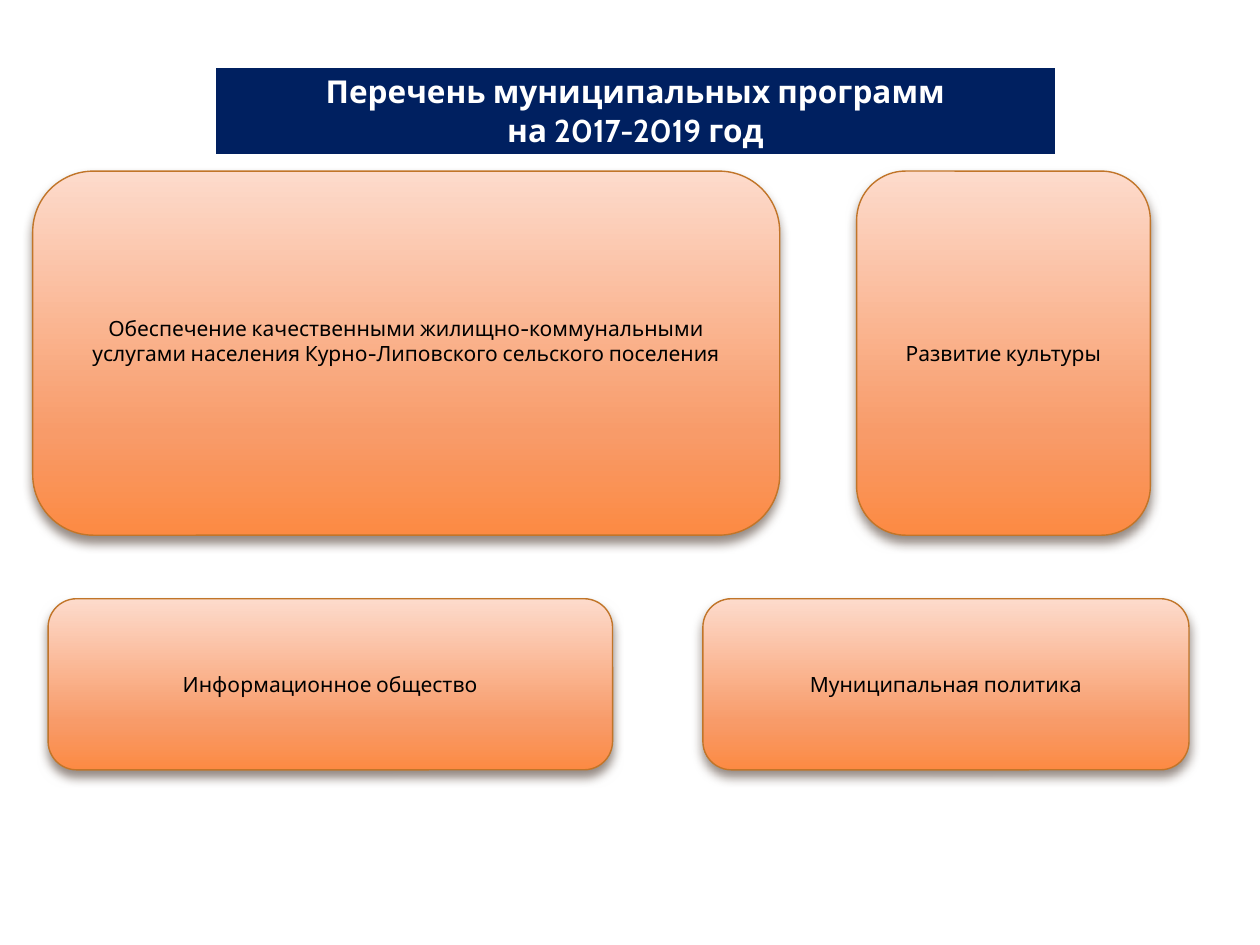
from dataclasses import dataclass

from lxml import etree
from pptx import Presentation
from pptx.dml.color import RGBColor
from pptx.enum.shapes import MSO_SHAPE
from pptx.enum.text import MSO_ANCHOR, PP_ALIGN
from pptx.oxml.ns import qn
from pptx.util import Cm, Pt

ROUNDED = MSO_SHAPE.ROUNDED_RECTANGLE
MIDDLE = MSO_ANCHOR.MIDDLE
CENTER = PP_ALIGN.CENTER
BLANK_LAYOUT = 6

# Content
HEADING = ["Перечень муниципальных программ", "на 2017-2019 год"]
HEADING_PLACE = (4.34, 1.35, 16.94, 1.78)  # left, top, width, height in cm

# Rows of programs: (top, height, [(name, left, width, extra bottom inset)])
PROGRAM_ROWS = [
    (3.45, 7.34, [
        ("Развитие культуры", 17.27, 5.92, 0),
        ("Обеспечение качественными жилищно-коммунальными услугами "
         "населения Курно-Липовского сельского поселения", 0.66, 15.06, 0.51),
    ]),
    (12.07, 3.45, [
        ("Информационное общество", 0.97, 11.38, 0),
        ("Муниципальная политика", 14.17, 9.8, 0),
    ]),
]


@dataclass(frozen=True)
class Theme:
    font: str = "Cabin"
    heading_size: int = 18
    program_size: int = 12
    heading_fill: str = "002060"
    heading_text: str = "FFFFFF"
    program_text: str = "000000"
    program_line: str = "C17529"
    shadow: str = "4E3B30"
    gradient: tuple = ((0, "FDDBCC"), (72, "F89B69"), (100, "FC8A43"))
    # Cell border widths in points, in schema order
    borders: tuple = (("lnL", 1), ("lnR", 1), ("lnT", 1), ("lnB", 3))


THEME = Theme()


def add_color(parent, color):
    return etree.SubElement(parent, qn("a:srgbClr"), val=color)


def write_lines(frame, lines, size, color, bold=False):
    for index, line in enumerate(lines):
        paragraph = frame.paragraphs[0] if index == 0 else frame.add_paragraph()
        paragraph.alignment = CENTER
        run = paragraph.add_run()
        run.text = line
        run.font.name = THEME.font
        run.font.size = Pt(size)
        run.font.bold = bold
        run.font.color.rgb = RGBColor.from_string(color)


def add_heading(slide):
    table = slide.shapes.add_table(1, 1, *map(Cm, HEADING_PLACE)).table
    cell = table.cell(0, 0)
    cell.fill.solid()
    cell.fill.fore_color.rgb = RGBColor.from_string(THEME.heading_fill)
    write_lines(cell.text_frame, HEADING, THEME.heading_size,
                THEME.heading_text, bold=True)
    # Borders come before the fill in the cell properties
    properties = cell._tc.get_or_add_tcPr()
    for index, (side, width) in enumerate(THEME.borders):
        border = etree.Element(qn(f"a:{side}"), w=str(Pt(width)))
        add_color(etree.SubElement(border, qn("a:solidFill")), THEME.heading_text)
        properties.insert(index, border)


def paint_gradient(shape):
    shape.fill.gradient()
    shape.fill.gradient_angle = 270  # counter-clockwise: top to bottom
    stops = shape._element.spPr.find(".//" + qn("a:gsLst"))
    for stop in list(stops):
        stops.remove(stop)
    for percent, color in THEME.gradient:
        add_color(etree.SubElement(stops, qn("a:gs"), pos=str(percent * 1000)), color)


def add_shadow(shape):
    shape.shadow.inherit = False
    effects = shape._element.spPr.find(qn("a:effectLst"))
    shadow = etree.SubElement(effects, qn("a:outerShdw"), blurRad=str(Pt(6)),
                              dist=str(Pt(4)), dir="5400000", rotWithShape="0")
    etree.SubElement(add_color(shadow, THEME.shadow), qn("a:alpha"), val="60000")


def add_program(slide, name, left, top, width, height, extra_inset):
    box = slide.shapes.add_shape(ROUNDED, *map(Cm, (left, top, width, height)))
    paint_gradient(box)
    box.line.color.rgb = RGBColor.from_string(THEME.program_line)
    box.line.width = Pt(0.79)
    add_shadow(box)
    frame = box.text_frame
    frame.word_wrap = True
    frame.vertical_anchor = MIDDLE
    frame.margin_bottom += Cm(extra_inset)
    write_lines(frame, [name], THEME.program_size, THEME.program_text)


def main():
    deck = Presentation()
    deck.slide_width, deck.slide_height = Cm(25.4), Cm(19.05)
    slide = deck.slides.add_slide(deck.slide_layouts[BLANK_LAYOUT])
    add_heading(slide)
    for top, height, programs in PROGRAM_ROWS:
        for name, left, width, extra_inset in programs:
            add_program(slide, name, left, top, width, height, extra_inset)
    deck.save("out.pptx")


if __name__ == "__main__":
    main()
